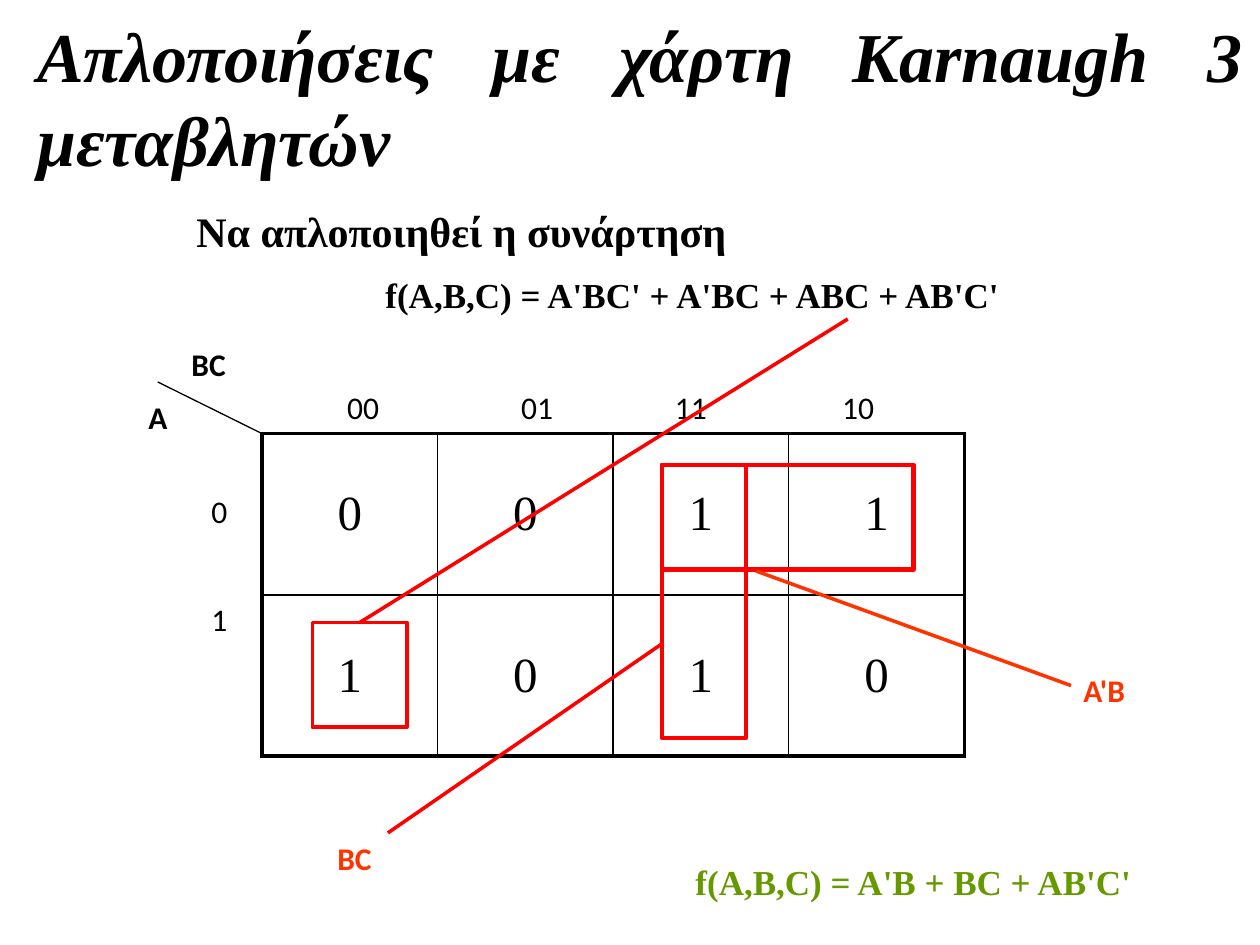
from lxml.etree import SubElement
from pptx import Presentation
from pptx.dml.color import RGBColor
from pptx.enum.shapes import MSO_CONNECTOR as Connector, MSO_SHAPE as Shape
from pptx.enum.text import MSO_ANCHOR as Anchor, PP_ALIGN as Align
from pptx.oxml.ns import qn
from pptx.util import Cm, Pt

SERIF, SANS = "Times New Roman", "Calibri"
BLACK, RED, ORANGE, GREEN = "000000", "FF0000", "FF3300", "669900"

# Content: all lengths in centimetres
TITLE = "Απλοποιήσεις με χάρτη Karnaugh 3 μεταβλητών"
TASK = "Να απλοποιηθεί η συνάρτηση"
FUNCTION = "f(A,B,C) = A'BC' + A'BC + ABC + AB'C'"
RESULT = "f(A,B,C) = A'B + BC + AB'C'"
VALUES = [["0", "0", "1", "1"], ["1", "0", "1", "0"]]
MAP_LEFT, MAP_TOP, CELL_WIDTH, CELL_HEIGHT = 5.28, 8.74, 3.54, 3.25
COLUMN_LABELS = [("00", 7.32), ("01", 10.83), ("11", 13.93), ("10", 17.3)]  # centre x
ROW_LABELS = [("0", 9.8), ("1", 11.98)]  # top
BOLD_LABELS = [  # text, left, top, colour
    ("BC", 3.61, 6.83, BLACK),
    ("A", 2.74, 7.9, BLACK),
    ("BC", 6.55, 16.79, ORANGE),
    ("A'B", 21.59, 13.41, ORANGE),
]
GROUPS = {  # left, top, width, height, line width
    "BC": (13.34, 9.37, 1.7, 5.51, 2.5),
    "A'B": (13.34, 9.37, 5.08, 2.11, 2.5),
    "AB'C'": (6.3, 12.55, 1.9, 2.11, 2.25),
}
LEADERS = [  # start, end, colour, width
    ((MAP_LEFT, MAP_TOP), (3.18, 7.7), BLACK, 0.75),
    ((13.34, 12.98), (7.82, 16.79), RED, 2),
    ((15.24, 11.51), (21.59, 13.82), ORANGE, 2),
]
TERM_END = (17.09, 6.43)


def color(value):
    return RGBColor.from_string(value)


def write(paragraph, text, size=18, font=SANS, fill=BLACK, bold=False,
          italic=False, align=Align.LEFT, before=0):
    paragraph.alignment = align
    paragraph.space_before = Pt(before)
    run = paragraph.add_run()
    run.text = text
    run.font.size, run.font.name = Pt(size), font
    run.font.bold, run.font.italic = bold, italic
    run.font.color.rgb = color(fill)


def add_text(slide, text, left, top, width, height=1.02, **text_format):
    box = slide.shapes.add_textbox(Cm(left), Cm(top), Cm(width), Cm(height))
    box.text_frame.word_wrap = True
    write(box.text_frame.paragraphs[0], text, **text_format)
    return box.text_frame


def add_line(slide, start, end, line_color, width):
    line = slide.shapes.add_connector(
        Connector.STRAIGHT, *(Cm(value) for value in (*start, *end)))
    line.line.color.rgb = color(line_color)
    line.line.width = Pt(width)
    SubElement(line._element.spPr, qn("a:effectLst"))
    return line


def add_group(slide, left, top, width, height, line_width):
    shape = slide.shapes.add_shape(
        Shape.RECTANGLE, Cm(left), Cm(top), Cm(width), Cm(height))
    shape.shadow.inherit = False
    shape.fill.background()
    shape.line.color.rgb = color(RED)
    shape.line.width = Pt(line_width)
    return shape


def set_borders(cell, widths):
    properties = cell._tc.get_or_add_tcPr()
    for index, (side, width) in enumerate(widths.items()):
        border = SubElement(properties, qn(f"a:ln{side}"), w=str(Pt(width)))
        fill = SubElement(border, qn("a:solidFill"))
        SubElement(fill, qn("a:srgbClr"), val=BLACK)
        properties.insert(index, border)


def add_map(slide):
    rows, columns = len(VALUES), len(VALUES[0])
    table = slide.shapes.add_table(
        rows, columns, Cm(MAP_LEFT), Cm(MAP_TOP),
        Cm(CELL_WIDTH * columns), Cm(CELL_HEIGHT * rows)).table
    table.first_row = table.horz_banding = False
    for column in table.columns:
        column.width = Cm(CELL_WIDTH)
    for r, values in enumerate(VALUES):
        table.rows[r].height = Cm(CELL_HEIGHT)
        for c, value in enumerate(values):
            cell = table.cell(r, c)
            cell.vertical_anchor = Anchor.MIDDLE
            cell.fill.background()
            write(cell.text_frame.paragraphs[0], value, size=28, font=SERIF,
                  align=Align.CENTER)
            outer = {"L": c == 0, "R": c == columns - 1,
                     "T": r == 0, "B": r == rows - 1}
            set_borders(cell, {side: 2.25 if edge else 1
                               for side, edge in outer.items()})


def main():
    presentation = Presentation()
    presentation.slide_width, presentation.slide_height = Cm(25.4), Cm(19.05)
    slide = presentation.slides.add_slide(presentation.slide_layouts[6])

    # Title and task
    add_text(slide, TITLE, 0.5, 0.13, 24.8, 3.68, size=40, font=SERIF,
             bold=True, italic=True, align=Align.JUSTIFY)
    frame = add_text(slide, TASK, 3.71, 4.01, 21, 2.57, size=24, font=SERIF, bold=True)
    paragraph = frame.add_paragraph()
    write(paragraph, FUNCTION, size=20, font=SERIF, bold=True, before=10)
    paragraph._p.get_or_add_pPr().set("marL", str(Cm(3.81)))

    # Karnaugh map and its labels
    add_map(slide)
    label_width = 1.4
    for text, center in COLUMN_LABELS:
        add_text(slide, text, center - label_width / 2, 7.7, label_width,
                 align=Align.CENTER)
    for text, top in ROW_LABELS:
        add_text(slide, text, 4.01, top, 1.07)
    for text, left, top, fill in BOLD_LABELS:
        add_text(slide, text, left, top, 1.9, bold=True, fill=fill)

    # Groups of ones and their leader lines
    groups = {term: add_group(slide, *place) for term, place in GROUPS.items()}
    for leader in LEADERS:
        add_line(slide, *leader)
    left, top, width = GROUPS["AB'C'"][:3]
    term_line = add_line(slide, (left + width / 2, top), TERM_END, RED, 2)
    term_line.begin_connect(groups["AB'C'"], 0)

    # Simplified function
    add_text(slide, RESULT, 13.77, 17.22, 11.6, 1.12, size=20, font=SERIF,
             bold=True, fill=GREEN)

    presentation.save("out.pptx")


if __name__ == "__main__":
    main()
